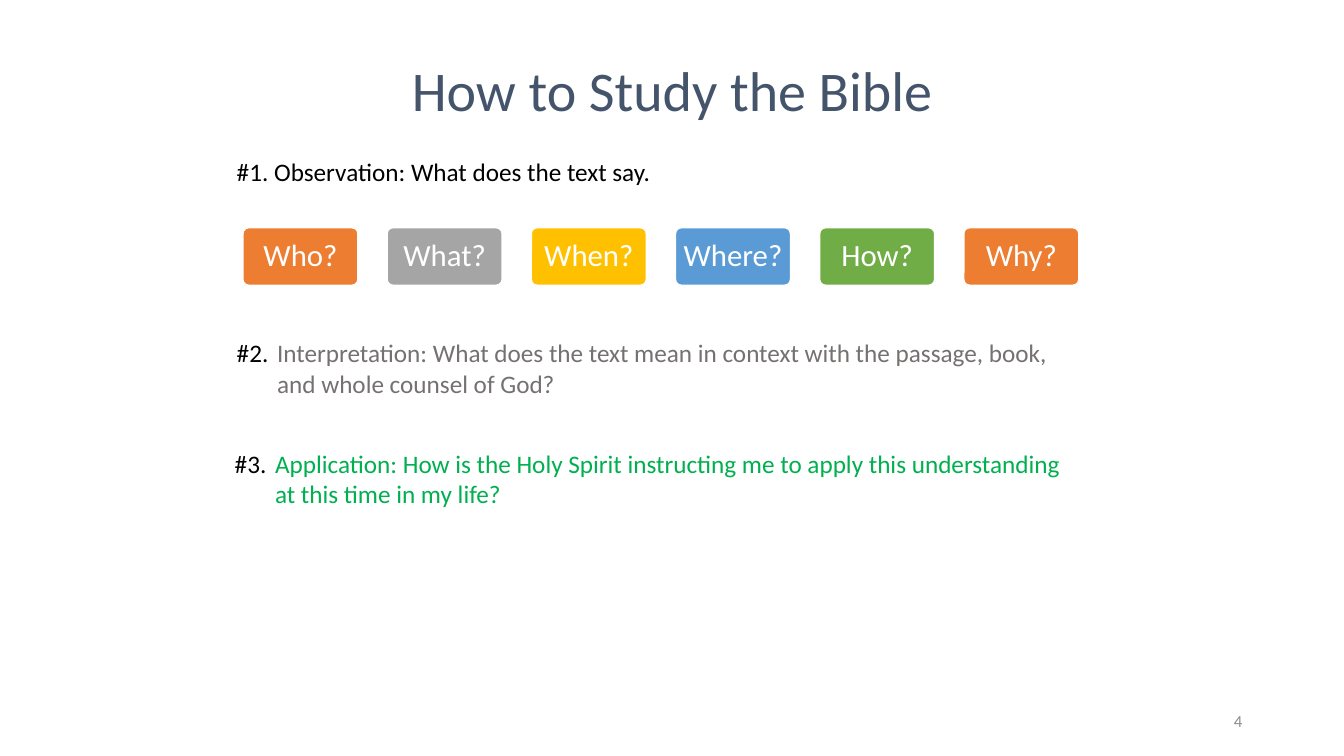
"""Build the slide on the three steps of Bible study."""
from dataclasses import dataclass

from pptx import Presentation
from pptx.dml.color import RGBColor
from pptx.enum.shapes import MSO_SHAPE as Shape
from pptx.enum.text import MSO_ANCHOR as Anchor, MSO_AUTO_SIZE as AutoSize, PP_ALIGN as Align
from pptx.slide import Slide
from pptx.util import Inches, Pt

FONT = "Calibri"
BLACK = RGBColor(0x00, 0x00, 0x00)
WHITE = RGBColor(0xFF, 0xFF, 0xFF)
SLATE = RGBColor(0x44, 0x54, 0x6A)
PALE_GRAY = RGBColor(0x8C, 0x8C, 0x8C)
DARK_GRAY = RGBColor(0x76, 0x71, 0x71)
ORANGE = RGBColor(0xED, 0x7D, 0x31)
GRAY = RGBColor(0xA5, 0xA5, 0xA5)
GOLD = RGBColor(0xFF, 0xC0, 0x00)
BLUE = RGBColor(0x5B, 0x9B, 0xD5)
GREEN = RGBColor(0x70, 0xAD, 0x47)
BRIGHT_GREEN = RGBColor(0x00, 0xB0, 0x50)

BUTTON_LEFT, BUTTON_TOP, BUTTON_PITCH = 2.41, 2.26, 1.43
BUTTON_WIDTH, BUTTON_HEIGHT = 1.14, 0.57
HANGING_INDENT = 0.4


@dataclass(frozen=True)
class Question:
    label: str
    fill: RGBColor


@dataclass(frozen=True)
class Phrase:
    text: str
    color: RGBColor


@dataclass(frozen=True)
class Step:
    left: float
    top: float
    height: float
    phrases: tuple[Phrase, ...]
    hanging: bool = True


QUESTIONS = (
    Question("Who?", ORANGE),
    Question("What?", GRAY),
    Question("When?", GOLD),
    Question("Where?", BLUE),
    Question("How?", GREEN),
    Question("Why?", ORANGE),
)

STEPS = (
    Step(2.25, 1.5, 0.4, (Phrase("#1. Observation: What does the text say.", BLACK),), False),
    Step(2.25, 3.3, 0.71, (
        Phrase("#2. \t", BLACK),
        Phrase("Interpretation: What does the text mean in context with the passage, book, "
               "and whole counsel of God?", DARK_GRAY),
    )),
    Step(2.23, 4.4, 0.71, (
        Phrase("#3. \t", BLACK),
        Phrase("Application: How is the Holy Spirit instructing me to apply this understanding "
               "at this time in my life?", BRIGHT_GREEN),
    )),
)


def add_run(paragraph, text: str, size: float, color: RGBColor) -> None:
    run = paragraph.add_run()
    run.text = text
    run.font.name = FONT
    run.font.size = Pt(size)
    run.font.color.rgb = color


def add_title(slide: Slide, text: str) -> None:
    title = slide.shapes.title
    title.left, title.top = Inches(0.88), Inches(0.5)
    title.width, title.height = Inches(11.57), Inches(0.85)
    frame = title.text_frame
    frame.auto_size = AutoSize.NONE
    frame.vertical_anchor = Anchor.MIDDLE
    paragraph = frame.paragraphs[0]
    paragraph.alignment = Align.CENTER
    paragraph.line_spacing = 0.9
    add_run(paragraph, text, 40, SLATE)


def add_question(slide: Slide, position: int, question: Question) -> None:
    button = slide.shapes.add_shape(
        Shape.ROUNDED_RECTANGLE,
        Inches(BUTTON_LEFT + position * BUTTON_PITCH), Inches(BUTTON_TOP),
        Inches(BUTTON_WIDTH), Inches(BUTTON_HEIGHT))
    button.adjustments[0] = 0.1
    button.shadow.inherit = False
    button.fill.solid()
    button.fill.fore_color.rgb = question.fill
    button.line.color.rgb = WHITE
    button.line.width = Pt(1)
    frame = button.text_frame
    frame.margin_left = frame.margin_right = Inches(0.05)
    frame.margin_top = frame.margin_bottom = Inches(0.03)
    frame.vertical_anchor = Anchor.MIDDLE
    paragraph = frame.paragraphs[0]
    paragraph.alignment = Align.CENTER
    paragraph.line_spacing = 0.9
    add_run(paragraph, question.label, 22, WHITE)


def add_step(slide: Slide, step: Step) -> None:
    box = slide.shapes.add_textbox(
        Inches(step.left), Inches(step.top), Inches(8.6), Inches(step.height))
    frame = box.text_frame
    frame.word_wrap = True
    frame.auto_size = AutoSize.SHAPE_TO_FIT_TEXT
    paragraph = frame.paragraphs[0]
    if step.hanging:
        properties = paragraph._p.get_or_add_pPr()
        properties.set("marL", str(Inches(HANGING_INDENT)))
        properties.set("indent", str(-Inches(HANGING_INDENT)))
    for phrase in step.phrases:
        add_run(paragraph, phrase.text, 18, phrase.color)


def add_page_number(slide: Slide, number: str) -> None:
    box = slide.shapes.add_textbox(Inches(9.42), Inches(6.95), Inches(3), Inches(0.4))
    frame = box.text_frame
    frame.word_wrap = True
    frame.vertical_anchor = Anchor.MIDDLE
    paragraph = frame.paragraphs[0]
    paragraph.alignment = Align.RIGHT
    paragraph.space_after = Pt(6)
    add_run(paragraph, number, 12, PALE_GRAY)


def main() -> None:
    presentation = Presentation()
    presentation.slide_width = Inches(13.33)
    presentation.slide_height = Inches(7.5)
    slide = presentation.slides.add_slide(presentation.slide_layouts.get_by_name("Title Only"))
    add_title(slide, "How to Study the Bible")
    add_page_number(slide, "4")
    for position, question in enumerate(QUESTIONS):
        add_question(slide, position, question)
    for step in STEPS:
        add_step(slide, step)
    presentation.save("out.pptx")


if __name__ == "__main__":
    main()
